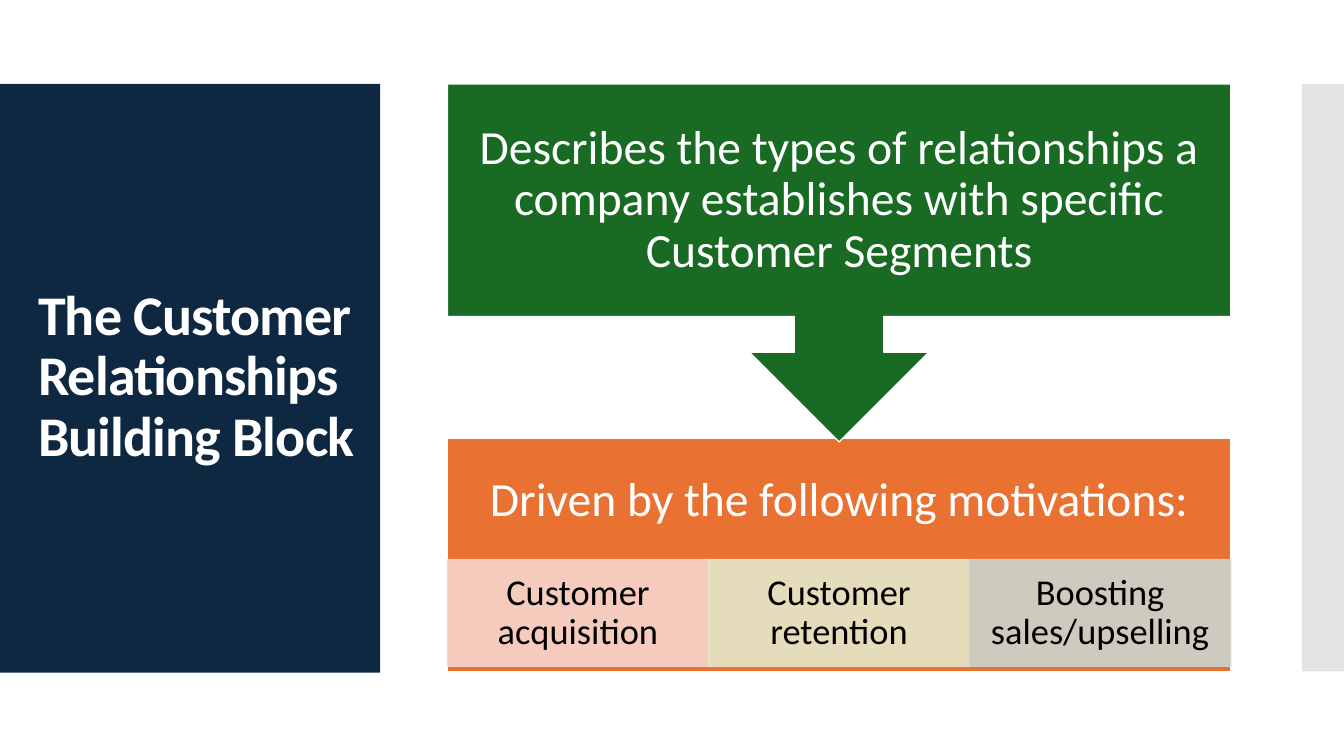
from lxml.etree import SubElement
from pptx import Presentation
from pptx.dml.color import RGBColor
from pptx.enum.shapes import MSO_SHAPE as Shape
from pptx.enum.text import MSO_ANCHOR as Anchor, PP_ALIGN as Align
from pptx.oxml.ns import qn
from pptx.util import Pt

COLORS = {
    "navy": "0E2841", "gray": "C8C8C8", "green": "196B24", "orange": "E97132",
    "pink": "F7D5CE", "sand": "E5E8CA", "sage": "CCD4CD",
    "white": "FFFFFF", "black": "000000",
}
MOTIVATIONS = [
    ("Customer acquisition", "pink"),
    ("Customer retention", "sand"),
    ("Boosting sales/upselling", "sage"),
]


def rgb(name):
    """Return the named colour."""
    return RGBColor.from_string(COLORS[name])


def add_block(slide, box, fill, line=None, opacity=100, kind=Shape.RECTANGLE):
    """Add a filled shape with an optional outline in the given box."""
    shape = slide.shapes.add_shape(kind, *map(Pt, box))
    shape.shadow.inherit = False
    shape.fill.solid()
    shape.fill.fore_color.rgb = rgb(fill)
    if line:
        shape.line.color.rgb = rgb(line)
        shape.line.width = Pt(0.85)
    else:
        shape.line.fill.background()
    if opacity < 100:
        for color in shape.element.spPr.iter(qn("a:srgbClr")):
            SubElement(color, qn("a:alpha"), val=str(opacity * 1000))
    return shape


def set_text(shape, text, size, color="white", bold=False, align=Align.CENTER,
             insets=(7.2, 3.6, 7.2, 3.6), tracking=0):
    """Write one formatted paragraph, centred vertically in the shape."""
    frame = shape.text_frame
    frame.word_wrap = True
    frame.vertical_anchor = Anchor.MIDDLE
    frame.margin_left, frame.margin_top, frame.margin_right, frame.margin_bottom = map(Pt, insets)
    paragraph = frame.paragraphs[0]
    paragraph.alignment = align
    paragraph.line_spacing = 0.9
    run = paragraph.add_run()
    run.text = text
    font = run.font
    font.name, font.size, font.bold = "Calibri", Pt(size), bold
    font.color.rgb = rgb(color)
    if tracking:
        font._element.set("spc", str(round(tracking * 100)))


def add_title_panel(slide, left, top, width, height):
    """Draw the dark side panel with the slide title in front of it."""
    add_block(slide, (left, top, width, height), "navy")
    title = slide.shapes.title
    title.element.getparent().append(title.element)
    title.left, title.top = Pt(left + 20), Pt(top + 28.5)
    title.width, title.height = Pt(width - 29), Pt(height - 58)
    set_text(title, "The Customer Relationships Building Block", 40,
             bold=True, align=Align.LEFT, tracking=-0.6)


def add_motivations(slide, left, top, width, height):
    """Draw the motivations block with its row of equal tiles."""
    header, tile_top, tile_height = 90, 86.4, 76.4
    block = add_block(slide, (left, top, width, height), "orange", "white")
    set_text(block, "Driven by the following motivations:", 34,
             insets=(18.7, 18.7, 18.7, height - header + 18.7))
    tile_width = width / len(MOTIVATIONS)
    for index, (text, color) in enumerate(MOTIVATIONS):
        box = (left + index * tile_width, top + tile_top, tile_width, tile_height)
        tile = add_block(slide, box, color, color, opacity=90)
        set_text(tile, text, 26, "black", insets=(14, 2.9, 14, 2.9))


def add_definition(slide, left, top, width, height):
    """Draw the definition callout that points downwards."""
    callout = add_block(slide, (left, top, width, height), "green", "white",
                        kind=Shape.DOWN_ARROW_CALLOUT)
    set_text(callout, "Describes the types of relationships a company establishes "
             "with specific Customer Segments", 34, insets=(18.7,) * 4)


def main():
    """Build and save the presentation."""
    presentation = Presentation()
    presentation.slide_width, presentation.slide_height = Pt(960), Pt(540)
    slide = presentation.slides.add_slide(presentation.slide_layouts[5])
    add_block(slide, (930, 60, 30, 419.5), "gray", opacity=50)
    add_title_panel(slide, 0, 60, 271.5, 420.5)
    add_motivations(slide, 319.7, 313.2, 559.4, 166.2)
    add_definition(slide, 319.7, 60, 559.4, 255.6)
    presentation.save("out.pptx")


if __name__ == "__main__":
    main()
